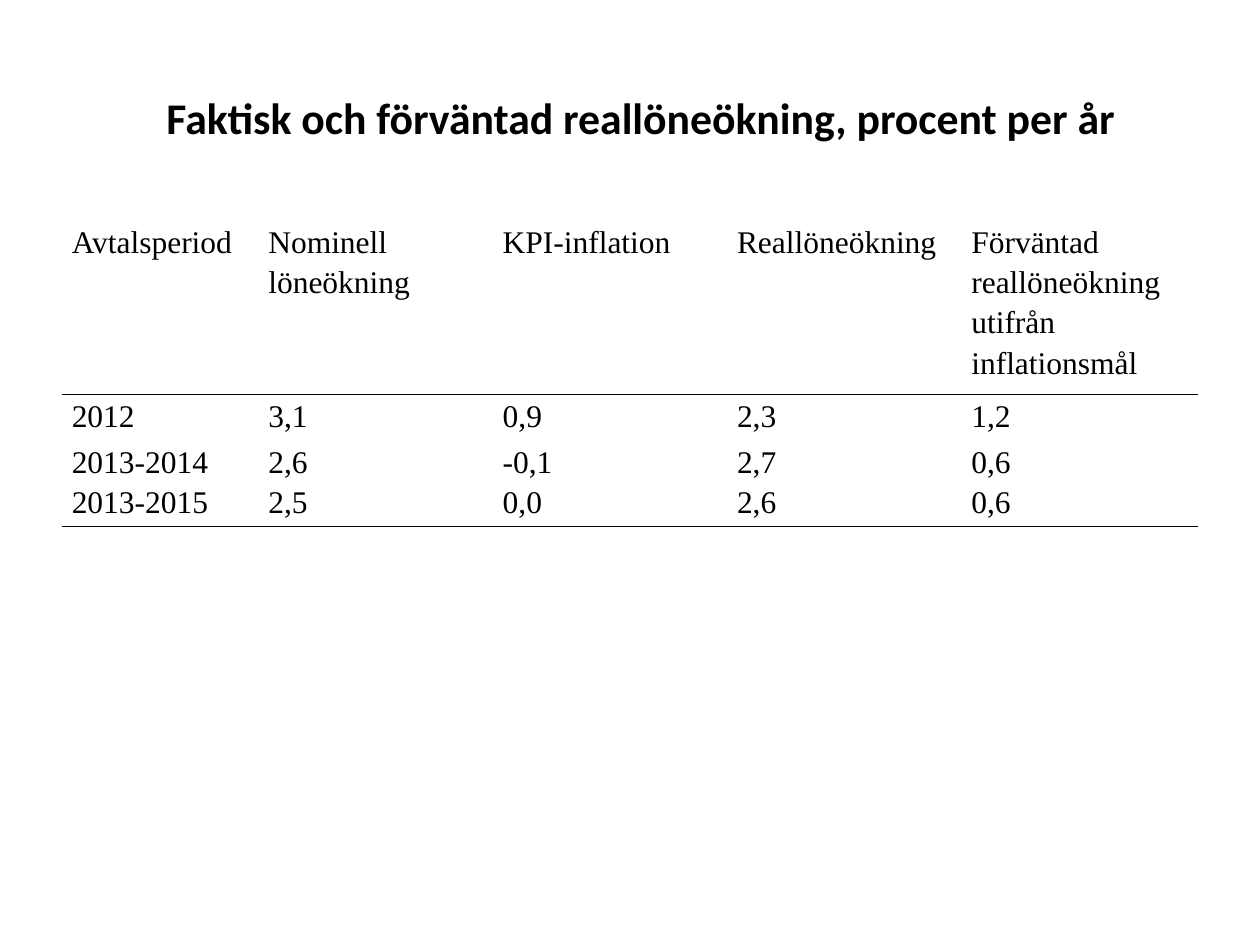
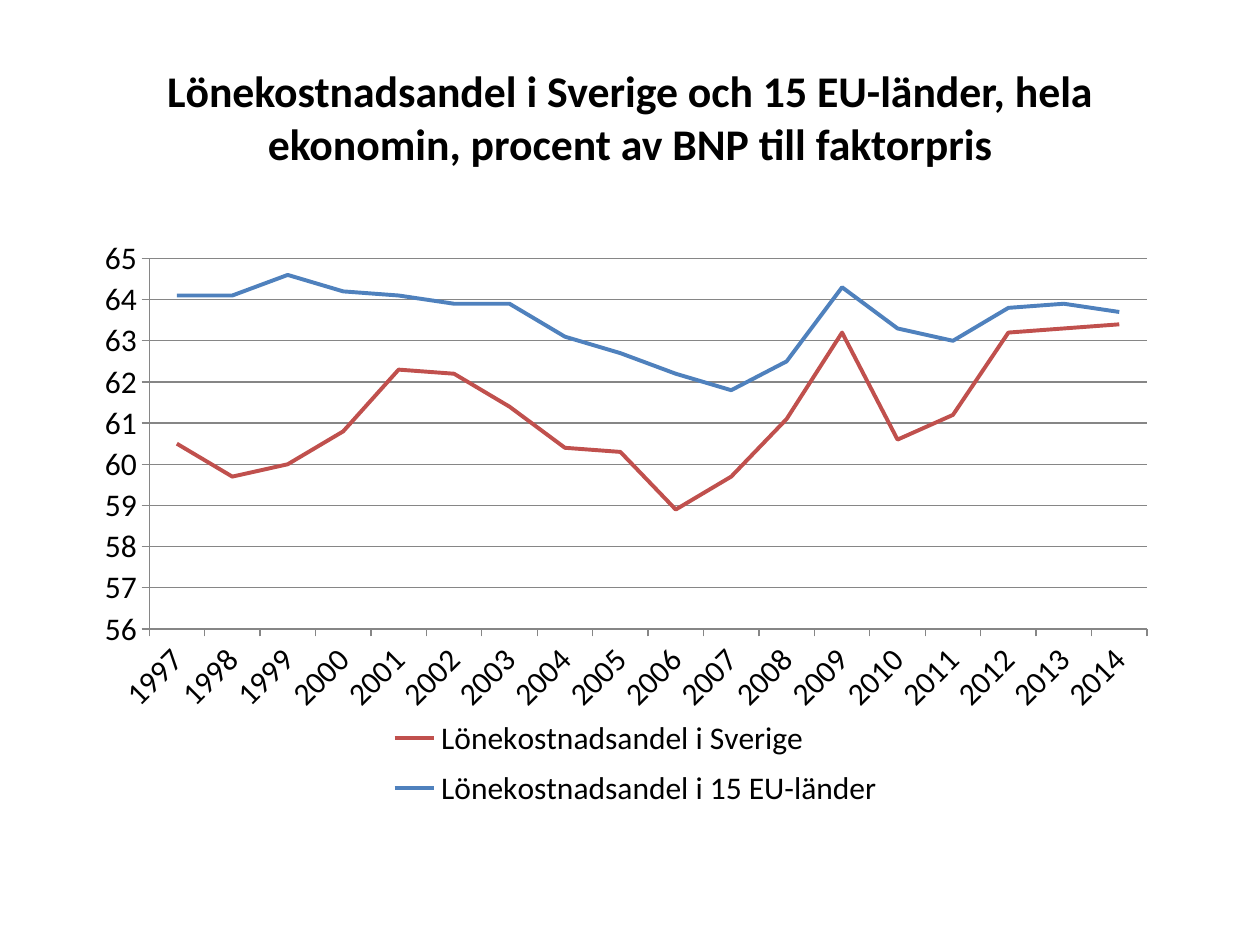
from lxml.etree import SubElement as Sub
from pptx import Presentation
from pptx.chart.data import CategoryChartData as Data
from pptx.dml.color import RGBColor as Rgb
from pptx.enum.chart import XL_CHART_TYPE as Kind, XL_LEGEND_POSITION as Spot
from pptx.enum.chart import XL_TICK_MARK as Tick
from pptx.enum.text import MSO_ANCHOR as Anchor, PP_ALIGN as Align
from pptx.oxml.ns import qn
from pptx.util import Pt

SCALE = 9144  # EMU per px, 100 px to the inch
HUES = {"ink": "000000", "paper": "FFFFFF", "grid": "868686",
        "eu": "4F81BD", "sweden": "C0504D"}

HEAD = ["Avtalsperiod", "Nominell löneökning", "KPI-inflation", "Reallöneökning",
        "Förväntad reallöneökning utifrån inflationsmål"]
ROWS = [HEAD,
        ["2012", "3,1", "0,9", "2,3", "1,2"],
        ["2013-2014\n2013-2015", "2,6\n2,5", "-0,1\n0,0", "2,7\n2,6", "0,6\n0,6"]]

YEARS = [str(year) for year in range(1997, 2015)]
SHARES = [
    ("Lönekostnadsandel i 15 EU-länder", "eu",
     [64.1, 64.1, 64.6, 64.2, 64.1, 63.9, 63.9, 63.1, 62.7,
      62.2, 61.8, 62.5, 64.3, 63.3, 63.0, 63.8, 63.9, 63.7]),
    ("Lönekostnadsandel i Sverige", "sweden",
     [60.5, 59.7, 60.0, 60.8, 62.3, 62.2, 61.4, 60.4, 60.3,
      58.9, 59.7, 61.1, 63.2, 60.6, 61.2, 63.2, 63.3, 63.4]),
]


def px(*sizes):
    return [size * SCALE for size in sizes]


def hue(name):
    return Rgb.from_string(HUES[name])


def write(frame, text, font="Calibri", size=18, bold=False, align=Align.LEFT, space=None):
    """Fill a text frame, one paragraph per line of text."""
    frame.word_wrap = True
    frame.text = text
    for para in frame.paragraphs:
        para.alignment, para.line_spacing = align, space
        style = para.runs[0].font
        style.name, style.size, style.bold = font, Pt(size), bold
        style.color.rgb = hue("ink")


def rule(cell, side):
    """Draw a black border on one side (lnT or lnB) of a cell."""
    line = Sub(cell._tc.get_or_add_tcPr(), qn("a:" + side), w=str(Pt(1)))
    fill = Sub(line, qn("a:solidFill"))
    Sub(fill, qn("a:srgbClr"), val=HUES["ink"])


def place(part, index, box, inner=False):
    """Give a chart part a fixed place, in fractions of the chart."""
    for old in part.findall(qn("c:layout")):
        part.remove(old)
    layout = part.makeelement(qn("c:layout"))
    part.insert(index, layout)
    spot = Sub(layout, qn("c:manualLayout"))
    if inner:
        Sub(spot, qn("c:layoutTarget"), val="inner")
    for name in ("xMode", "yMode"):
        Sub(spot, qn("c:" + name), val="edge")
    for name, value in zip("xywh", box):
        Sub(spot, qn("c:" + name), val=str(value))


class Deck:
    def __init__(self):
        self.show = Presentation()
        self.show.slide_width, self.show.slide_height = px(1000, 750)
        self.slide = None

    def page(self, title, width=900):
        self.slide = self.show.slides.add_slide(self.show.slide_layouts[6])
        box = self.slide.shapes.add_textbox(*px(50, 30, width, 125))
        box.text_frame.vertical_anchor = Anchor.MIDDLE
        write(box.text_frame, title, size=25, bold=True, align=Align.CENTER)

    def table(self, rows, box, wide, high):
        shape = self.slide.shapes.add_table(len(rows), len(wide), *px(*box))
        grid = shape.table
        grid.first_row = grid.horz_banding = False
        for col, size in zip(grid.columns, px(*wide)):
            col.width = size
        for row, size in zip(grid.rows, px(*high)):
            row.height = size
        for r, row in enumerate(rows):
            for c, text in enumerate(row):
                self.cell(grid.cell(r, c), text, r, len(rows) - 1)

    def cell(self, cell, text, row, last):
        cell.margin_left, cell.margin_right = px(7, 7)
        cell.margin_top = cell.margin_bottom = 0
        write(cell.text_frame, text, font="Times New Roman", space=1.15)
        # Borders go before the fill
        if row == 1:
            rule(cell, "lnT")
        if row in (0, last):
            rule(cell, "lnB")
        cell.fill.solid()
        cell.fill.fore_color.rgb = hue("paper")

    def chart(self, cats, series, box, low, high):
        data = Data()
        data.categories = cats
        for name, _, values in series:
            data.add_series(name, values)
        shape = self.slide.shapes.add_chart(Kind.LINE, *px(*box), data)
        chart = shape.chart
        chart.has_title = False
        chart.font.name, chart.font.size = "Calibri", Pt(18)
        chart.font.color.rgb = hue("ink")

        # Lines
        plot = chart.plots[0]
        plot.vary_by_categories = False
        for line, (_, name, _) in zip(plot.series, series):
            line.smooth = False
            line.format.line.width = Pt(2.25)
            line.format.line.color.rgb = hue(name)

        # Axes
        years, share = chart.category_axis, chart.value_axis
        share.minimum_scale, share.maximum_scale, share.major_unit = low, high, 1
        share.has_major_gridlines = True
        for axis in (years, share):
            axis.major_tick_mark, axis.minor_tick_mark = Tick.OUTSIDE, Tick.NONE
            axis.tick_labels.font.size = Pt(18)
        for part in (years, share, share.major_gridlines):
            part.format.line.width = Pt(0.75)
            part.format.line.color.rgb = hue("grid")
        years._element.find(qn("c:txPr")).find(qn("a:bodyPr")).set("rot", "-2700000")

        # Legend and plot area; the legend lists the last series first
        chart.has_legend = True
        chart.legend.position = Spot.RIGHT
        chart.legend.include_in_layout = False
        first, second = [line._element for line in plot.series]
        first.addprevious(second)
        place(chart.legend._element, 1, (0.27, 0.78, 0.47, 0.18))
        area = chart._chartSpace.chart.plotArea
        place(area, 0, (0.076, 0.061, 0.88, 0.594), inner=True)


def main():
    deck = Deck()

    # Real wage growth
    deck.page("Faktisk och förväntad reallöneökning, procent per år", width=917)
    deck.table(ROWS, (50, 175, 900, 243), [156] + [186] * 4, [116, 36, 36])

    # Labour cost share
    deck.page("Lönekostnadsandel i Sverige och 15 EU-länder, hela ekonomin, "
              "procent av BNP till faktorpris")
    deck.chart(YEARS, SHARES, (50, 175, 900, 495), 56, 65)

    deck.show.save("out.pptx")


if __name__ == "__main__":
    main()
